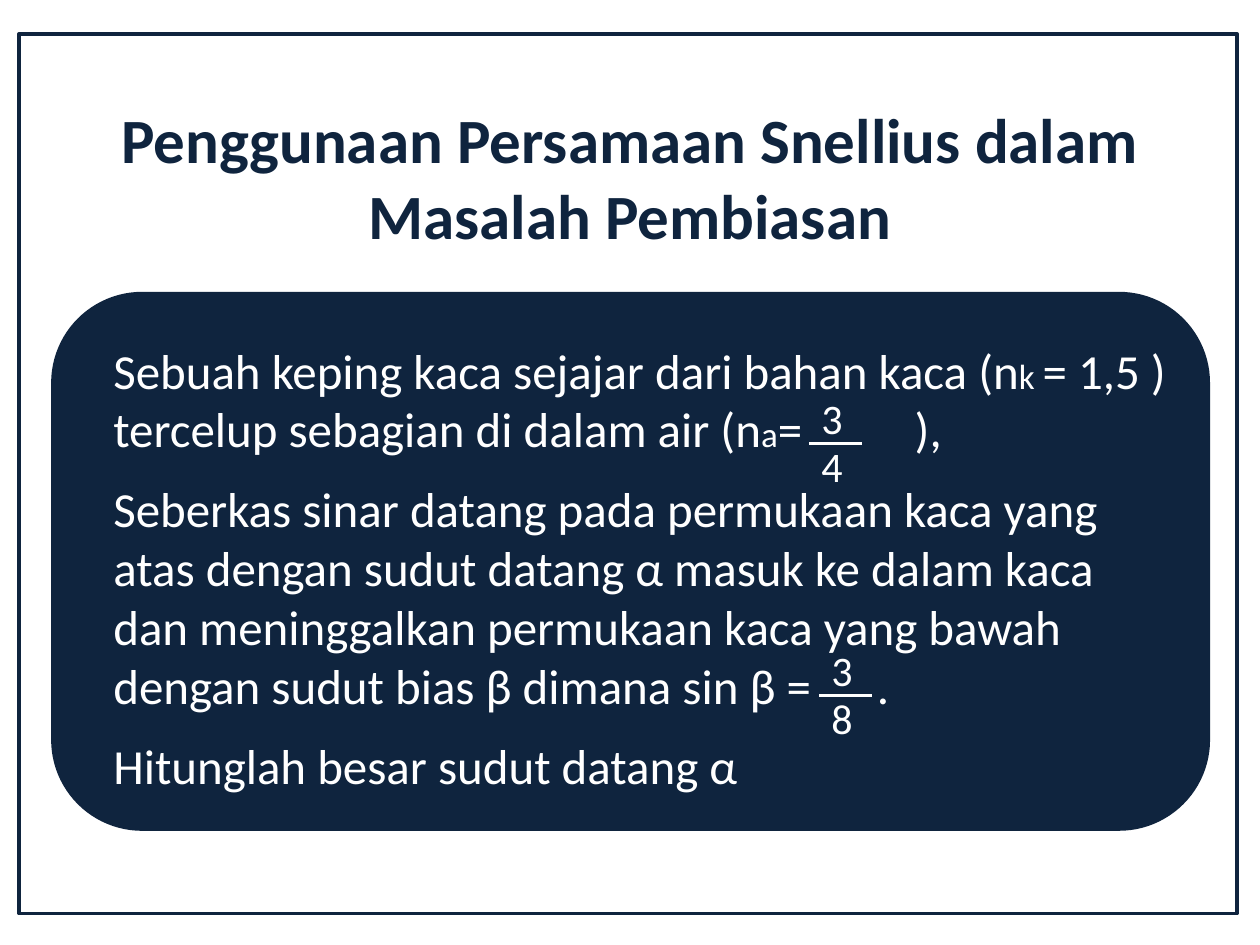
from lxml import etree
from pptx import Presentation
from pptx import util as u
from pptx.dml.color import RGBColor
from pptx.enum import shapes, text
from pptx.oxml.ns import qn

NAVY, WHITE = "0F243E", "FFFFFF"


def rgb(value):
    return RGBColor.from_string(value)


def add_run(p, content, size=28, color=WHITE, bold=False):
    r = p.add_run()
    r.text = content
    r.font.name = "Calibri"
    r.font.size = u.Pt(size)
    r.font.bold = bold
    r.font.color.rgb = rgb(color)


class SlideBuilder:
    """Holds the current slide and draws its elements in one style."""

    def __init__(self, prs):
        self.s = prs.slides.add_slide(prs.slide_layouts[6])

    def panel(self, kind, x, y, w, h, fill=None):
        sp = self.s.shapes.add_shape(kind, *map(u.Inches, (x, y, w, h)))
        sp.shadow.inherit = False
        if fill:
            sp.fill.solid()
            sp.fill.fore_color.rgb = rgb(fill)
        else:
            sp.fill.background()
        sp.line.color.rgb = rgb(NAVY)
        sp.line.width = u.Pt(2)

    def textbox(self, x, y, w, h, parent=None):
        sp = (parent or self.s).shapes.add_textbox(*map(u.Inches, (x, y, w, h)))
        tf = sp.text_frame
        tf.word_wrap = True
        tf.vertical_anchor = text.MSO_ANCHOR.TOP
        return tf

    def title(self, content, x, y, w, h):
        p = self.textbox(x, y, w, h).paragraphs[0]
        p.alignment = text.PP_ALIGN.CENTER
        add_run(p, content, size=36, color=NAVY, bold=True)

    def body(self, paragraphs, x, y, w, h):
        tf = self.textbox(x, y, w, h)
        tf.margin_left = u.Inches(0.48)
        for i, (tab, runs) in enumerate(paragraphs):
            p = tf.add_paragraph() if i else tf.paragraphs[0]
            if tab:
                tabs = etree.SubElement(p._p.get_or_add_pPr(), qn("a:tabLst"))
                etree.SubElement(tabs, qn("a:tab"), pos=str(u.Inches(tab)), algn="l")
            p.space_before = u.Pt(12 if i else 0)
            for content, size in runs:
                add_run(p, content, size=size)

    def fraction(self, top, bottom, x, y):
        group = self.s.shapes.add_group_shape()
        for content, dy in ((bottom, 0.4), (top, 0.02)):
            tf = self.textbox(x, y + dy, 0.5, 0.53, group)
            add_run(tf.paragraphs[0], content, size=24)
        bar = group.shapes.add_connector(
            shapes.MSO_CONNECTOR.STRAIGHT,
            *map(u.Inches, (x, y + 0.47, x + 0.42, y + 0.47)))
        bar.line.color.rgb = rgb(WHITE)
        bar.line.width = u.Pt(2.25)
        etree.SubElement(bar._element.spPr, qn("a:effectLst"))


def main():
    prs = Presentation()
    prs.slide_width, prs.slide_height = u.Inches(10), u.Inches(7.5)
    b = SlideBuilder(prs)
    b.panel(shapes.MSO_SHAPE.RECTANGLE, 0.15, 0.27, 9.67, 6.98)
    b.panel(shapes.MSO_SHAPE.ROUNDED_RECTANGLE, 0.42, 2.33, 9.17, 4.25, NAVY)
    b.title("Penggunaan Persamaan Snellius dalam Masalah Pembiasan", 0.5, 0.75, 9, 1.25)
    b.body([
        (6.36, [("Sebuah keping kaca sejajar dari bahan kaca (n", 28), ("k ", 20),
                ("= 1,5 ) tercelup sebagian di dalam air (n", 28), ("a", 20),
                ("=\t),", 28)]),
        (6.06, [("Seberkas sinar datang pada permukaan kaca yang atas dengan sudut "
                 "datang α masuk ke dalam kaca dan meninggalkan permukaan kaca yang "
                 "bawah dengan sudut bias β dimana sin β =\t.", 28)]),
        (None, [("Hitunglah besar sudut datang α", 28)]),
    ], 0.42, 2.65, 9, 3.93)
    b.fraction("3", "8", 6.5, 5.05)
    b.fraction("3", "4", 6.42, 3.05)
    prs.save("out.pptx")


if __name__ == "__main__":
    main()
